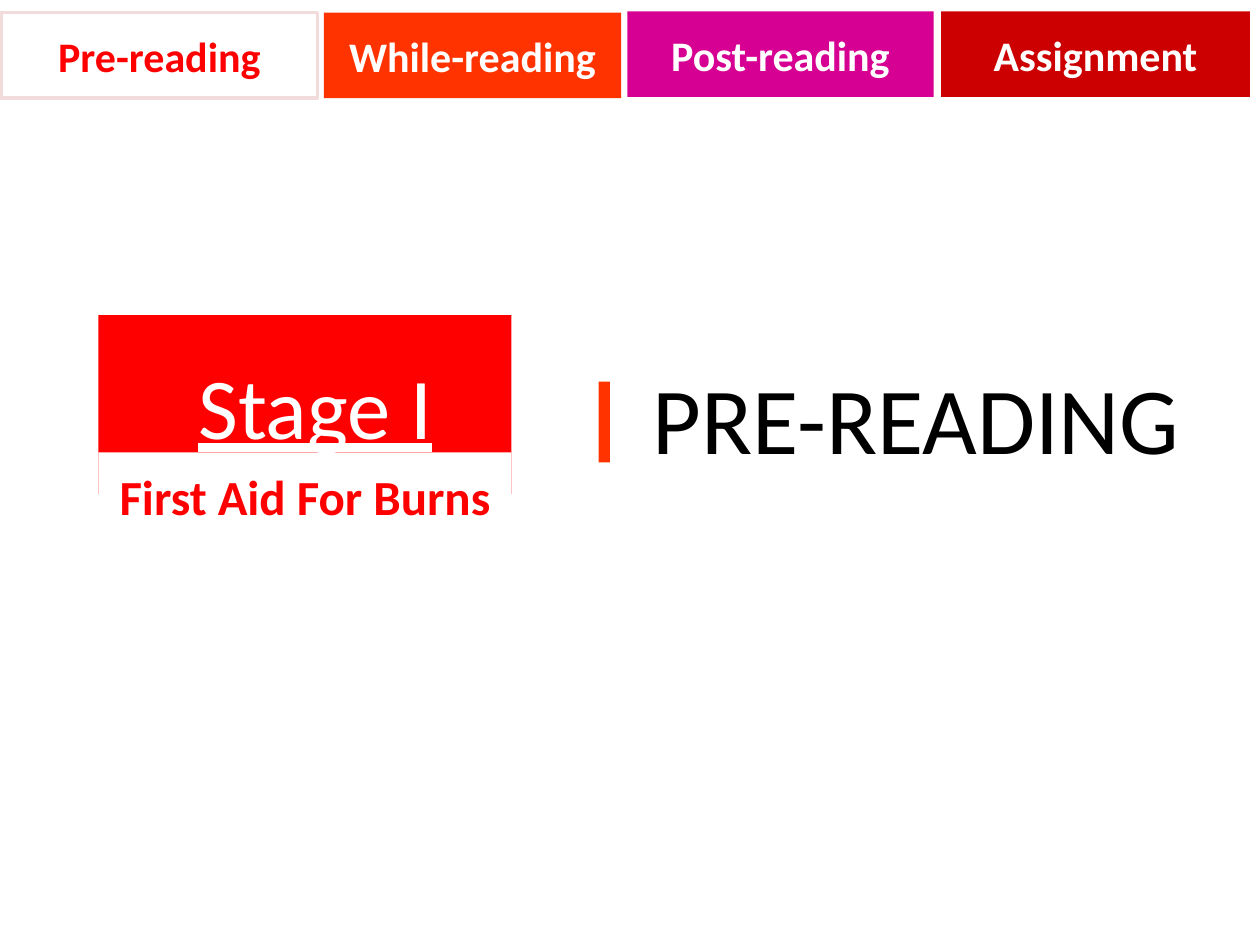
from pptx import Presentation
from pptx.dml.color import RGBColor
from pptx.enum.shapes import MSO_SHAPE
from pptx.enum.text import MSO_ANCHOR, PP_ALIGN
from pptx.util import Inches, Pt

RECT = MSO_SHAPE.RECTANGLE
TOP, MID, LOW = MSO_ANCHOR.TOP, MSO_ANCHOR.MIDDLE, MSO_ANCHOR.BOTTOM
LEFT, MIDST = PP_ALIGN.LEFT, PP_ALIGN.CENTER

WIDE, HIGH = 10, 7.5
COLS, ROWS = 100, 75
WHITE, BLACK, RED = "FFFFFF", "000000", "FF0000"
FLAME, PINK, DARK, BLUSH = "FF3300", "D60093", "CC0000", "F2DCDB"


def paint(code):
    return RGBColor.from_string(code)


def write(frame, text, size=24, color=WHITE, bold=False, line=False,
          align=MIDST, anchor=MID, space=None, pad=(0.1, 0.05, 0.1, 0.05)):
    frame.word_wrap = True
    frame.vertical_anchor = anchor
    (frame.margin_left, frame.margin_top,
     frame.margin_right, frame.margin_bottom) = map(Inches, pad)
    para = frame.paragraphs[0]
    para.alignment = align
    if space:
        para.line_spacing = space
    run = para.add_run()
    run.text = text
    font = run.font
    font.name, font.size = Deck.face, Pt(size)
    font.bold, font.underline = bold, line
    font.color.rgb = paint(color)


class Deck:
    """Holds the style and the current slide; lengths are grid cells."""
    face = "Calibri"

    def __init__(self):
        self.show = Presentation()
        self.show.slide_width = Inches(WIDE)
        self.show.slide_height = Inches(HIGH)
        self.slide = self.show.slides.add_slide(self.show.slide_layouts[6])

    def place(self, col, row, wide, high):
        across, down = WIDE / COLS, HIGH / ROWS
        return (Inches(col * across), Inches(row * down),
                Inches(wide * across), Inches(high * down))

    def label(self, cell, text, **style):
        box = self.slide.shapes.add_textbox(*self.place(*cell))
        write(box.text_frame, text, **style)

    def block(self, cell, fill, text=None, edge=None, **style):
        box = self.slide.shapes.add_shape(RECT, *self.place(*cell))
        box.shadow.inherit = False
        box.fill.solid()
        box.fill.fore_color.rgb = paint(fill)
        if edge:
            box.line.color.rgb = paint(edge)
            box.line.width = Pt(2)
        else:
            box.line.fill.background()
        if text:
            write(box.text_frame, text, **style)


def main():
    deck = Deck()

    # Heading with its accent bar
    deck.label((50.8, 28.1, 45.3, 6.4), "PRE-READING", size=54,
               color=BLACK, align=LEFT, anchor=TOP)
    deck.block((47.5, 30.3, 0.9, 6.4), FLAME)

    # Row of stage tabs: text, column, row, width, fill, ink, edge
    tabs = [
        ("While-reading", 25.7, 1, 23.6, FLAME, WHITE, None),
        ("Post-reading", 49.8, 0.9, 24.3, PINK, WHITE, None),
        ("Pre-reading", 0.1, 1, 25.1, WHITE, RED, BLUSH),
        ("Assignment", 74.7, 0.9, 24.5, DARK, WHITE, None),
    ]
    for text, col, row, wide, fill, ink, edge in tabs:
        deck.block((col, row, wide, 6.8), fill, text, edge=edge,
                   color=ink, bold=True, pad=(0.11, 0.06, 0.11, 0.06))

    # Stage card with the lesson title below
    deck.block((7.8, 25, 32.8, 14.2), RED, "Stage I", size=49.5,
               line=True, pad=(0.26, 0.05, 0.1, 0.05))
    deck.block((7.8, 35.9, 32.8, 6.3), WHITE, "First Aid For Burns",
               size=28, color=RED, bold=True, anchor=LOW, space=1.2)

    deck.show.save("out.pptx")


if __name__ == "__main__":
    main()
